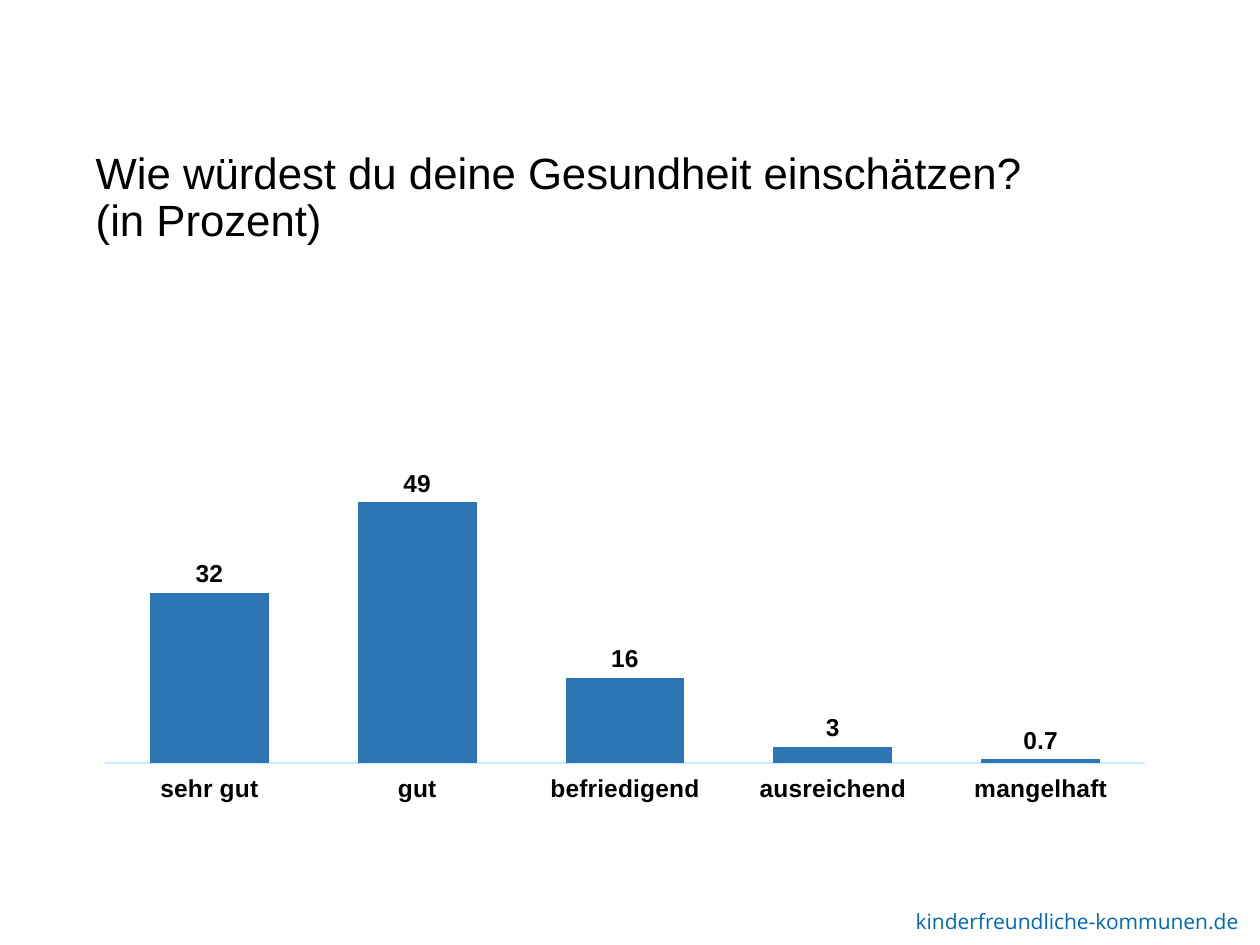
from lxml import etree
from pptx import Presentation
from pptx.chart.data import CategoryChartData
from pptx.dml.color import RGBColor
from pptx.enum.chart import XL_CHART_TYPE as ChartType
from pptx.enum.chart import XL_LABEL_POSITION as LabelPos
from pptx.enum.chart import XL_TICK_LABEL_POSITION as TickLabelPos
from pptx.enum.chart import XL_TICK_MARK as TickMark
from pptx.enum.text import MSO_ANCHOR, MSO_AUTO_SIZE, PP_ALIGN
from pptx.oxml.ns import qn
from pptx.util import Pt

COLORS = {"text": "000000", "bar": "2E75B6", "axis": "CEEAFF",
          "border": "FFFFFF", "site": "0069B5"}
TITLE_FONT = {"name": "Arial", "size": Pt(25), "bold": False}
CHART_FONT = {"name": "Arial", "size": Pt(14), "bold": True}
SITE_FONT = {"name": "Open Sans", "size": Pt(12)}

RATINGS = {"sehr gut": 32, "gut": 49, "befriedigend": 16,
           "ausreichend": 3, "mangelhaft": 0.7}
PLOT_AREA = {"x": 0.02, "y": 0.277, "w": 0.958, "h": 0.54}


def rgb(key):
    return RGBColor.from_string(COLORS[key])


def set_font(font, values, color):
    for name, value in values.items():
        setattr(font, name, value)
    font.color.rgb = rgb(color)


def place(shape, box):
    for name, value in zip(("left", "top", "width", "height"), box):
        setattr(shape, name, Pt(value))


def add_title(s, box, lines):
    title = s.shapes.title
    place(title, box)
    tf = title.text_frame
    tf.auto_size = MSO_AUTO_SIZE.NONE
    tf.vertical_anchor = MSO_ANCHOR.TOP
    tf.text = "\n".join(lines)
    for p in tf.paragraphs:
        p.alignment = PP_ALIGN.LEFT
        p.line_spacing = 0.9
        p.space_before = Pt(0)
        set_font(p.runs[0].font, TITLE_FONT, "text")


def set_plot_area(chart):
    """Fix the inner plot area as fractions of the chart."""
    plot_area = chart._chartSpace.chart.plotArea
    for old in plot_area.findall(qn("c:layout")):
        plot_area.remove(old)
    layout = etree.Element(qn("c:layout"))
    manual = etree.SubElement(layout, qn("c:manualLayout"))
    settings = {"layoutTarget": "inner", "xMode": "edge", "yMode": "edge", **PLOT_AREA}
    for tag, value in settings.items():
        etree.SubElement(manual, qn(f"c:{tag}")).set("val", str(value))
    plot_area.insert(0, layout)


def set_border(chart):
    """Give the chart space a thin border; it belongs right before c:txPr."""
    sp_pr = etree.Element(qn("c:spPr"))
    etree.SubElement(sp_pr, qn("a:noFill"))
    line = etree.SubElement(sp_pr, qn("a:ln"), w=str(Pt(0.75)))
    fill = etree.SubElement(line, qn("a:solidFill"))
    etree.SubElement(fill, qn("a:srgbClr"), val=COLORS["border"])
    chart._chartSpace.find(qn("c:txPr")).addprevious(sp_pr)


def add_rating_chart(s, box, ratings):
    data = CategoryChartData()
    data.categories = list(ratings)
    data.add_series("Series 1", list(ratings.values()))
    chart = s.shapes.add_chart(ChartType.COLUMN_CLUSTERED, *map(Pt, box), data).chart
    set_font(chart.font, CHART_FONT, "text")
    chart.has_legend = False
    chart.has_title = False
    set_plot_area(chart)
    set_border(chart)

    values = chart.value_axis
    values.minimum_scale, values.maximum_scale = 0, 60
    values.has_major_gridlines = False
    values.visible = False

    cats = chart.category_axis
    cats.major_tick_mark = cats.minor_tick_mark = TickMark.NONE
    cats.tick_label_position = TickLabelPos.LOW
    cats.format.line.color.rgb = rgb("axis")
    cats.format.line.width = Pt(0.75)
    set_font(cats.tick_labels.font, CHART_FONT, "text")

    plot = chart.plots[0]
    plot.gap_width, plot.overlap = 75, -27
    plot.vary_by_categories = False
    series = plot.series[0]
    series.format.fill.solid()
    series.format.fill.fore_color.rgb = rgb("bar")
    labels = series.data_labels
    labels.show_value = True
    labels.position = LabelPos.OUTSIDE_END
    set_font(labels.font, CHART_FONT, "text")


def add_site(s, box, address):
    tf = s.shapes.add_textbox(*map(Pt, box)).text_frame
    tf.word_wrap = True
    r = tf.paragraphs[0].add_run()
    r.text = address
    set_font(r.font, SITE_FONT, "site")


def main():
    prs = Presentation()
    prs.slide_width, prs.slide_height = Pt(720), Pt(540)
    s = prs.slides.add_slide(prs.slide_layouts[5])
    left, width = 47.5, 620.6
    add_title(s, (left, 82.8, width, 77),
              ["Wie würdest du deine Gesundheit einschätzen?", "(in Prozent)"])
    add_rating_chart(s, (left, 159.8, width, 338.4), RATINGS)
    add_site(s, (516.2, 515.5, 211, 21.6), "kinderfreundliche-kommunen.de")
    prs.save("out.pptx")


if __name__ == "__main__":
    main()
